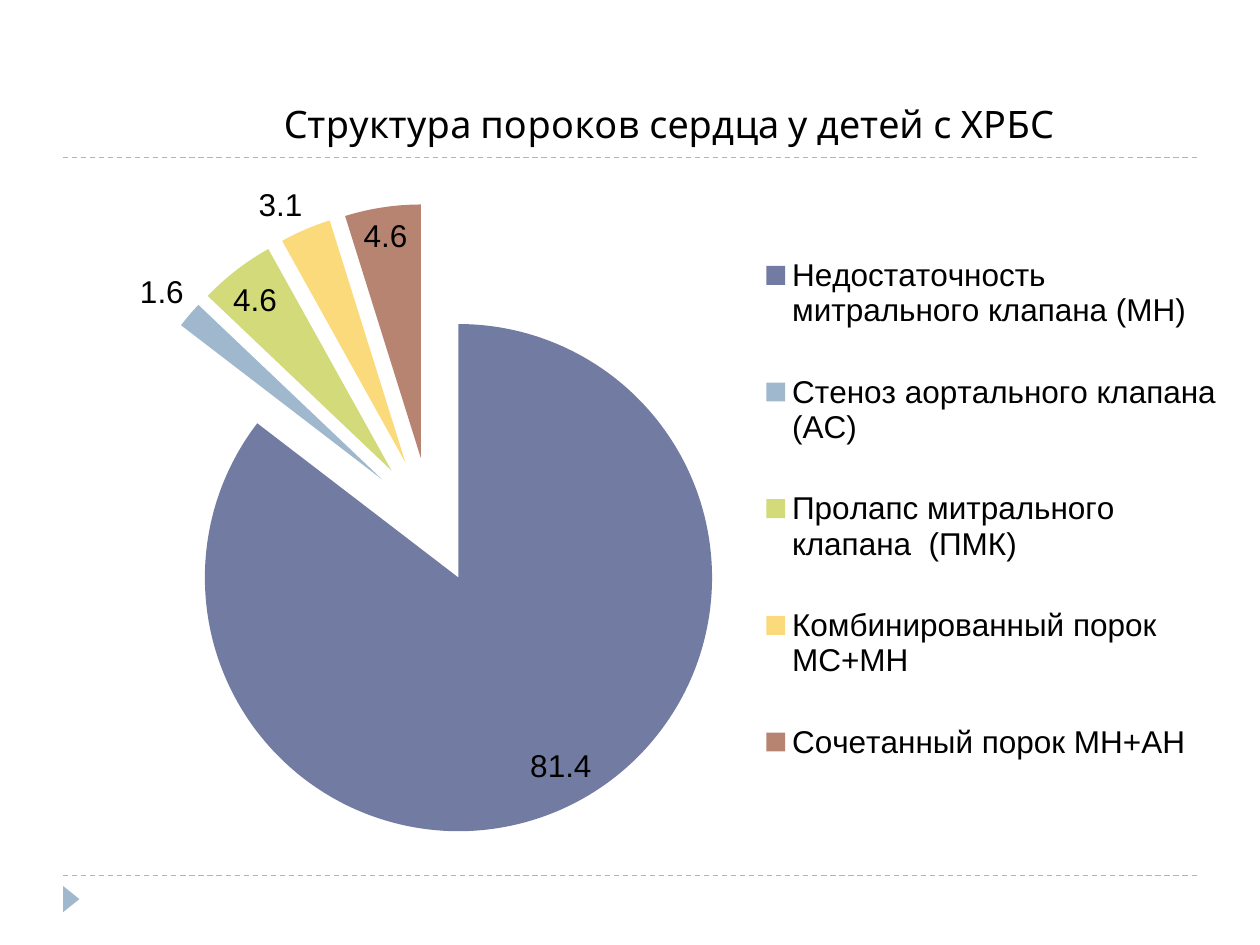
from dataclasses import dataclass

from lxml.etree import SubElement
from pptx import Presentation
from pptx.chart.data import CategoryChartData
from pptx.dml.color import RGBColor
from pptx.enum.chart import XL_CHART_TYPE, XL_LABEL_POSITION, XL_LEGEND_POSITION
from pptx.enum.dml import MSO_LINE
from pptx.enum.shapes import MSO_CONNECTOR, MSO_SHAPE
from pptx.oxml import parse_xml
from pptx.oxml.ns import nsdecls, qn
from pptx.util import Cm, Pt


@dataclass(frozen=True)
class Theme:
    accent: RGBColor = RGBColor.from_string("9FB8CD")
    text: RGBColor = RGBColor.from_string("000000")
    font: str = "Arial"
    title_font: str = "Karla"
    body_size: Pt = Pt(18)
    title_size: Pt = Pt(21.6)
    rule_width: Pt = Pt(0.75)


THEME = Theme()
TITLE = "Структура пороков сердца у детей с ХРБС"

# category, value, slice colour
DEFECTS = [
    ("Недостаточность митрального клапана (МН)", 81.4, "727CA3"),
    ("Стеноз аортального клапана (АС)", 1.6, "9FB8CD"),
    ("Пролапс митрального клапана  (ПМК)", 4.6, "D2DA7A"),
    ("Комбинированный порок МС+МН", 3.1, "FADA7A"),
    ("Сочетанный порок МН+АН", 4.6, "B88472"),
]


def style_font(font, size=THEME.body_size, name=THEME.font):
    font.size = size
    font.name = name
    font.bold = False
    font.color.rgb = THEME.text


def add_rule(slide, y):
    line = slide.shapes.add_connector(MSO_CONNECTOR.STRAIGHT, Cm(1.27), y, Cm(24.13), y)
    line.line.color.rgb = THEME.accent
    line.line.width = THEME.rule_width
    line.line.dash_style = MSO_LINE.DASH
    SubElement(line._element.spPr, qn("a:effectLst"))


def add_marker(slide):
    s = slide.shapes.add_shape(MSO_SHAPE.ISOSCELES_TRIANGLE,
                               Cm(1.17), Cm(17.96), Cm(0.53), Cm(0.33))
    s.rotation = 90
    s.shadow.inherit = False
    s.fill.solid()
    s.fill.fore_color.rgb = THEME.accent
    s.line.fill.background()


def place(element, before, target="", **fractions):
    """Give a chart part a manual layout, in fractions of the chart's size."""
    for old in element.findall(qn("c:layout")):
        element.remove(old)
    goal = f'<c:layoutTarget val="{target}"/>' if target else ""
    modes = '<c:xMode val="edge"/><c:yMode val="edge"/>'
    values = "".join(f'<c:{key} val="{value}"/>' for key, value in fractions.items())
    layout = parse_xml(f'<c:layout {nsdecls("c")}><c:manualLayout>{goal}{modes}{values}'
                       '</c:manualLayout></c:layout>')
    element.find(qn(before)).addprevious(layout)


def style_slices(series):
    for i, (_, _, colour) in enumerate(DEFECTS):
        fill = series.points[i].format.fill
        fill.solid()
        fill.fore_color.rgb = RGBColor.from_string(colour)
    explosion = parse_xml(f'<c:explosion {nsdecls("c")} val="25"/>')
    series._element.find(qn("c:dPt")).addprevious(explosion)


def add_pie(slide):
    data = CategoryChartData(number_format="General")
    data.categories = [name for name, *_ in DEFECTS]
    data.add_series("Series 1", [value for _, value, _ in DEFECTS])
    chart = slide.shapes.add_chart(XL_CHART_TYPE.PIE, Cm(1.3), Cm(1.52),
                                   Cm(23.8), Cm(16.18), data).chart
    style_font(chart.font)

    chart.has_title = True
    tf = chart.chart_title.text_frame
    tf.text = TITLE
    style_font(tf.paragraphs[0].runs[0].font, THEME.title_size, THEME.title_font)
    chart.chart_title.include_in_layout = False
    place(chart.chart_title._element, "c:overlay", x=0.18, y=0.02)

    chart.has_legend = True
    chart.legend.position = XL_LEGEND_POSITION.RIGHT
    chart.legend.include_in_layout = False
    style_font(chart.legend.font)
    place(chart.legend._element, "c:overlay", x=0.59, y=0.17, w=0.39, h=0.74)

    plot = chart.plots[0]
    plot.vary_by_categories = True
    plot.has_data_labels = True
    labels = plot.data_labels
    labels.show_value = True
    labels.position = XL_LABEL_POSITION.BEST_FIT
    style_font(labels.font)
    style_slices(plot.series[0])
    place(plot._element.getparent(), "c:pieChart", "inner", x=0.01, y=0.16, w=0.6, h=0.79)


def main():
    prs = Presentation()
    prs.slide_width, prs.slide_height = Cm(25.4), Cm(19.05)
    slide = prs.slides.add_slide(prs.slide_layouts[6])
    for y in (Cm(17.65), Cm(3.17)):
        add_rule(slide, y)
    add_marker(slide)
    add_pie(slide)
    prs.save("out.pptx")


if __name__ == "__main__":
    main()
